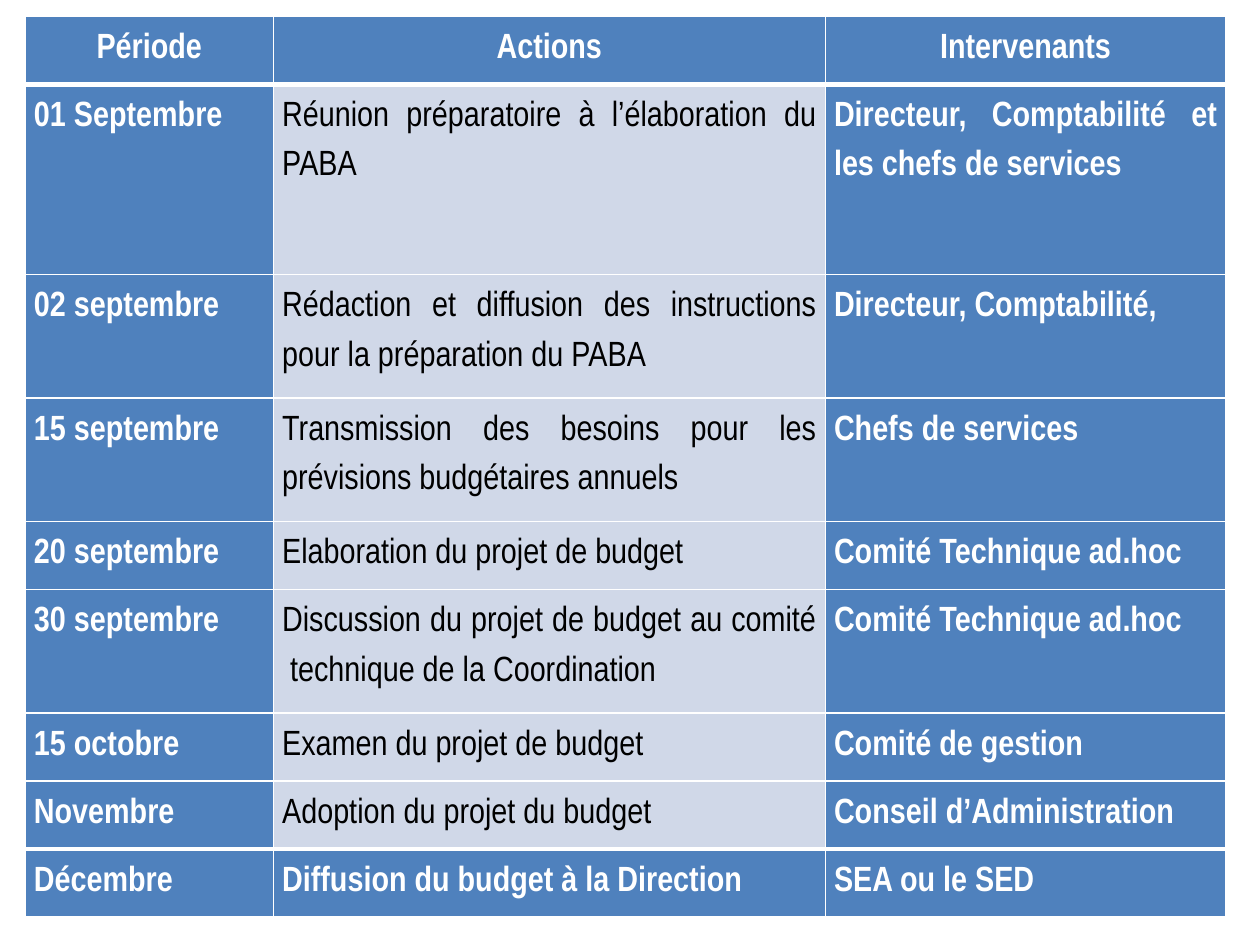
"""Build the slide with the yearly budget preparation calendar."""
import dataclasses

import lxml.etree
import pptx
import pptx.dml.color
import pptx.enum.text
import pptx.oxml.ns
import pptx.util

Inches = pptx.util.Inches
Pt = pptx.util.Pt
Align = pptx.enum.text.PP_ALIGN


@dataclasses.dataclass(frozen=True)
class Theme:
    """Colours, type and line widths of the slide."""
    accent: str = "4F81BD"
    pale: str = "D0D8E8"
    light: str = "FFFFFF"
    dark: str = "000000"
    font: str = "Arial Narrow"
    size: int = 20
    thin: int = 1
    thick: int = 3


THEME = Theme()
COLUMN_WIDTHS = (1.97, 4.38, 3.18)
ROW_HEIGHTS = (0.54, 1.51, 0.98, 0.98, 0.54, 0.98, 0.54, 0.54, 0.54)
CALENDAR = (
    ("Période", "Actions", "Intervenants"),
    ("01 Septembre", "Réunion préparatoire à l’élaboration du PABA",
     "Directeur, Comptabilité et les chefs de services"),
    ("02 septembre", "Rédaction et diffusion des instructions pour la préparation du PABA",
     "Directeur, Comptabilité,"),
    ("15 septembre", "Transmission des besoins pour les prévisions budgétaires annuels",
     "Chefs de services"),
    ("20 septembre", "Elaboration du projet de budget", "Comité Technique ad.hoc"),
    ("30 septembre", "Discussion du projet de budget au comité  technique de la Coordination",
     "Comité Technique ad.hoc"),
    ("15 octobre", "Examen du projet de budget", "Comité de gestion"),
    ("Novembre", "Adoption du projet du budget", "Conseil d’Administration"),
    ("Décembre", "Diffusion du budget à la Direction", "SEA ou le SED"),
)


def rgb(value):
    """Turn a hex string into a colour."""
    return pptx.dml.color.RGBColor.from_string(value)


def set_borders(cell, top, bottom):
    """Draw light borders around a cell with the given top and bottom widths."""
    properties = cell._tc.get_or_add_tcPr()
    qn = pptx.oxml.ns.qn
    widths = {"lnL": THEME.thin, "lnR": THEME.thin, "lnT": top, "lnB": bottom}
    for side, width in widths.items():
        line = lxml.etree.SubElement(properties, qn(f"a:{side}"), w=str(Pt(width)))
        fill = lxml.etree.SubElement(line, qn("a:solidFill"))
        lxml.etree.SubElement(fill, qn("a:srgbClr"), val=THEME.light)


def fill_cell(cell, text, alignment, emphasized):
    """Write and format the text and background of a cell."""
    cell.fill.solid()
    cell.fill.fore_color.rgb = rgb(THEME.accent if emphasized else THEME.pale)
    cell.margin_left = cell.margin_right = Inches(0.07)
    cell.margin_top = cell.margin_bottom = 0
    cell.text_frame.text = text
    paragraph = cell.text_frame.paragraphs[0]
    paragraph.alignment = alignment
    paragraph.line_spacing = 1.5
    font = paragraph.runs[0].font
    font.name = THEME.font
    font.size = Pt(THEME.size)
    font.bold = emphasized
    font.color.rgb = rgb(THEME.light if emphasized else THEME.dark)


def add_calendar(slide):
    """Add the calendar table with its header, body and closing row."""
    last = len(CALENDAR) - 1
    table = slide.shapes.add_table(
        len(CALENDAR), len(COLUMN_WIDTHS), Inches(0.2), Inches(0.13),
        Inches(sum(COLUMN_WIDTHS)), Inches(sum(ROW_HEIGHTS))).table
    table.first_col = table.last_col = table.last_row = True
    table.horz_banding = False
    for column, width in zip(table.columns, COLUMN_WIDTHS):
        column.width = Inches(width)
    for row, height in zip(table.rows, ROW_HEIGHTS):
        row.height = Inches(height)
    for row_index, texts in enumerate(CALENDAR):
        top = THEME.thick if row_index in (1, last) else THEME.thin
        bottom = THEME.thick if row_index in (0, last - 1) else THEME.thin
        alignment = Align.CENTER if row_index == 0 else Align.JUSTIFY
        for column_index, text in enumerate(texts):
            cell = table.cell(row_index, column_index)
            set_borders(cell, top, bottom)
            emphasized = column_index != 1 or row_index in (0, last)
            fill_cell(cell, text, alignment, emphasized)


def main():
    """Create the presentation and save it."""
    presentation = pptx.Presentation()
    presentation.slide_width = Inches(10)
    presentation.slide_height = Inches(7.5)
    slide = presentation.slides.add_slide(presentation.slide_layouts[6])
    add_calendar(slide)
    presentation.save("out.pptx")


if __name__ == "__main__":
    main()
